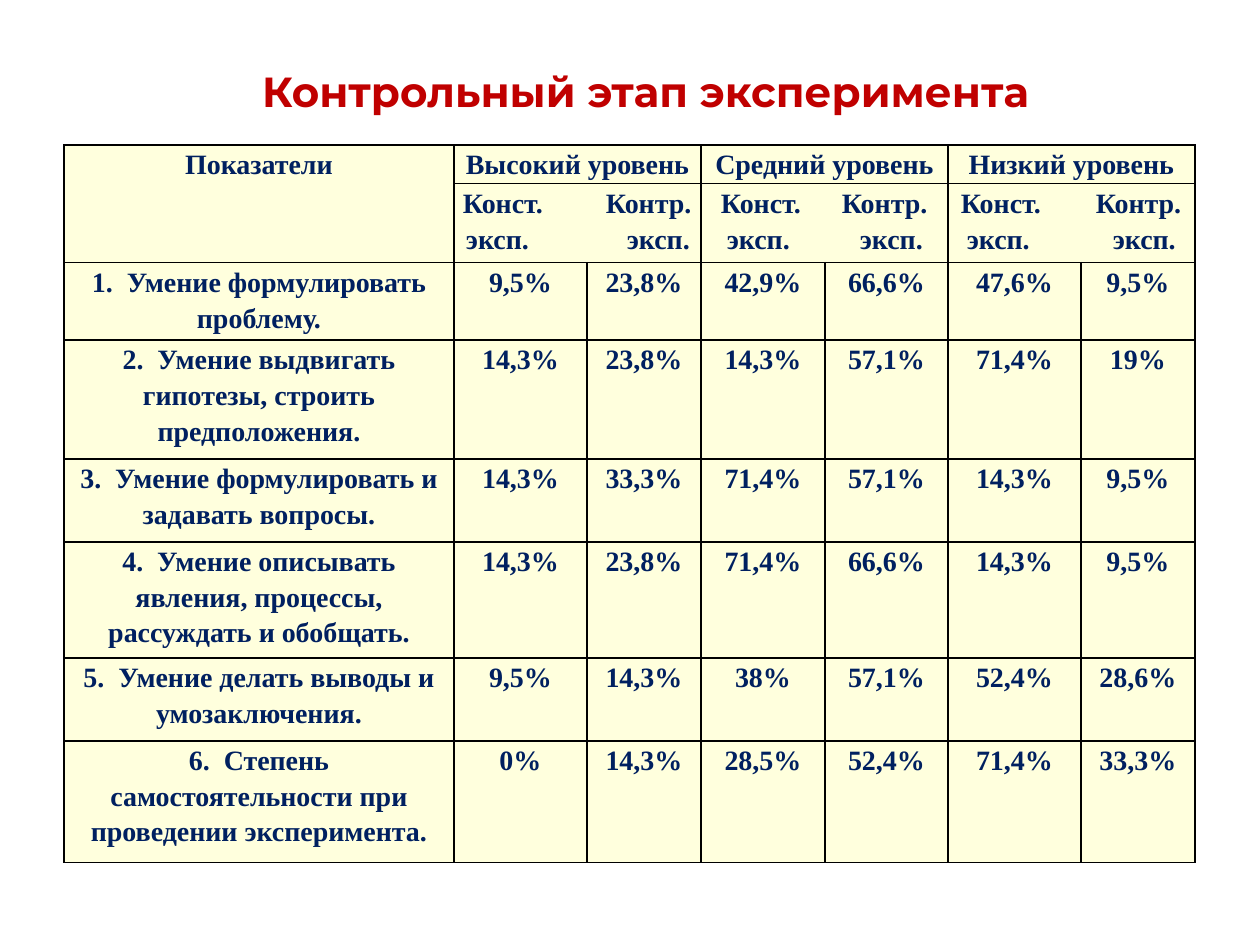
"""Build the slide with the results table of the control stage."""
from lxml import etree
from pptx import Presentation
from pptx.dml.color import RGBColor
from pptx.enum import text
from pptx.oxml import ns
from pptx.util import Pt

PX = 914400 / 126
RED = RGBColor(0xC0, 0x00, 0x00)
NAVY = RGBColor(0x00, 0x20, 0x60)
CREAM = RGBColor(0xFF, 0xFF, 0xDD)
BLACK = RGBColor(0x00, 0x00, 0x00)

COLS = [390, 133, 114, 124, 123, 133, 114]
ROWS = [38, 79, 77, 119, 83, 116, 83, 122]
LEVELS = [
    ("Высокий уровень", [(1, 144), (4, 165)]),
    ("Средний уровень", [(12, 133), (18, 151)]),
    ("Низкий уровень", [(5, 140), (11, 157)]),
]
STAGES = "\tКонст.\tКонтр.\n\tэксп.\tэксп."
SKILLS = [
    ("Умение формулировать проблему.", "9,5% 23,8% 42,9% 66,6% 47,6% 9,5%"),
    ("Умение выдвигать гипотезы, строить предположения.", "14,3% 23,8% 14,3% 57,1% 71,4% 19%"),
    ("Умение формулировать и задавать вопросы.", "14,3% 33,3% 71,4% 57,1% 14,3% 9,5%"),
    ("Умение описывать явления, процессы, рассуждать и обобщать.",
     "14,3% 23,8% 71,4% 66,6% 14,3% 9,5%"),
    ("Умение делать выводы и умозаключения.", "9,5% 14,3% 38% 57,1% 52,4% 28,6%"),
    ("Степень самостоятельности при проведении эксперимента.",
     "0% 14,3% 28,5% 52,4% 71,4% 33,3%"),
]


def px(n):
    return round(n * PX)


class Deck:
    def __init__(self, width, height):
        self.prs = Presentation()
        self.prs.slide_width, self.prs.slide_height = px(width), px(height)
        self.s = self.prs.slides.add_slide(self.prs.slide_layouts[5])

    def font(self, p, name, size, color):
        for r in p.runs:
            r.font.name, r.font.size, r.font.bold = name, Pt(size), True
            r.font.color.rgb = color

    def title(self, x, y, w, h, label):
        sp = self.s.shapes.title
        sp.left, sp.top, sp.width, sp.height = px(x), px(y), px(w), px(h)
        tf = sp.text_frame
        tf.text = label
        tf.word_wrap = True
        tf.auto_size = text.MSO_AUTO_SIZE.SHAPE_TO_FIT_TEXT
        tf.vertical_anchor = text.MSO_ANCHOR.MIDDLE
        p = tf.paragraphs[0]
        p.alignment = text.PP_ALIGN.CENTER
        self.font(p, "Montserrat", 24, RED)

    def table(self, x, y, cols, rows):
        frame = self.s.shapes.add_table(
            len(rows), len(cols), px(x), px(y), px(sum(cols)), px(sum(rows)))
        table = frame.table
        table.first_row = table.horz_banding = False
        for col, width in zip(table.columns, cols):
            col.width = px(width)
        for row, height in zip(table.rows, rows):
            row.height = px(height)
        for cell in table.iter_cells():
            self.style_cell(cell)
        return table

    def style_cell(self, cell):
        cell.margin_left = cell.margin_right = px(8)
        cell.margin_top = cell.margin_bottom = 0
        props = cell._tc.get_or_add_tcPr()
        for side in ("lnL", "lnR", "lnT", "lnB"):
            ln = etree.SubElement(props, ns.qn(f"a:{side}"), w=str(Pt(1)))
            fill = etree.SubElement(ln, ns.qn("a:solidFill"))
            etree.SubElement(fill, ns.qn("a:srgbClr"), val=str(BLACK))
        cell.fill.solid()
        cell.fill.fore_color.rgb = CREAM

    def cell_text(self, cell, label, stops=()):
        tf = cell.text_frame
        tf.text = label
        for p in tf.paragraphs:
            p.alignment = text.PP_ALIGN.CENTER
            p.line_spacing = 1.15
            self.font(p, "Times New Roman", 16, NAVY)
        for p, positions in zip(tf.paragraphs, stops):
            p.alignment = text.PP_ALIGN.LEFT
            tabs = etree.SubElement(p._p.get_or_add_pPr(), ns.qn("a:tabLst"))
            for pos in positions:
                etree.SubElement(tabs, ns.qn("a:tab"), pos=str(px(pos)), algn="l")


def main():
    deck = Deck(1260, 945)
    deck.title(95, 59, 1101, 63, "Контрольный этап эксперимента")
    table = deck.table(64, 145, COLS, ROWS)
    table.cell(0, 0).merge(table.cell(1, 0))
    deck.cell_text(table.cell(0, 0), "Показатели")
    for i, (level, stops) in enumerate(LEVELS):
        col = 1 + 2 * i
        for row in range(2):
            table.cell(row, col).merge(table.cell(row, col + 1))
        deck.cell_text(table.cell(0, col), level)
        deck.cell_text(table.cell(1, col), STAGES, stops)
    for i, (skill, values) in enumerate(SKILLS, 1):
        for col, label in enumerate([f"{i}.  {skill}", *values.split()]):
            deck.cell_text(table.cell(i + 1, col), label)
    deck.prs.save("out.pptx")


if __name__ == "__main__":
    main()
